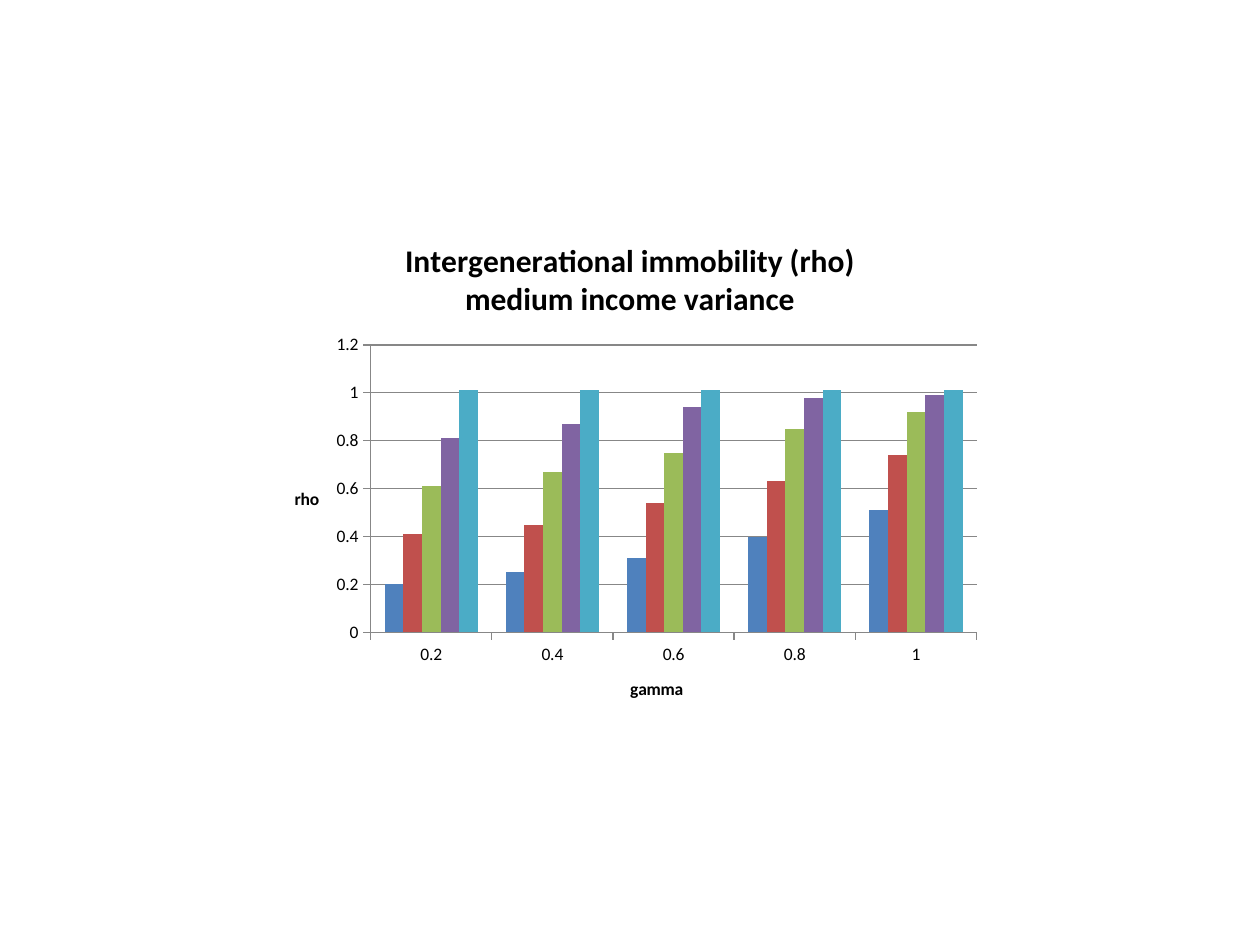
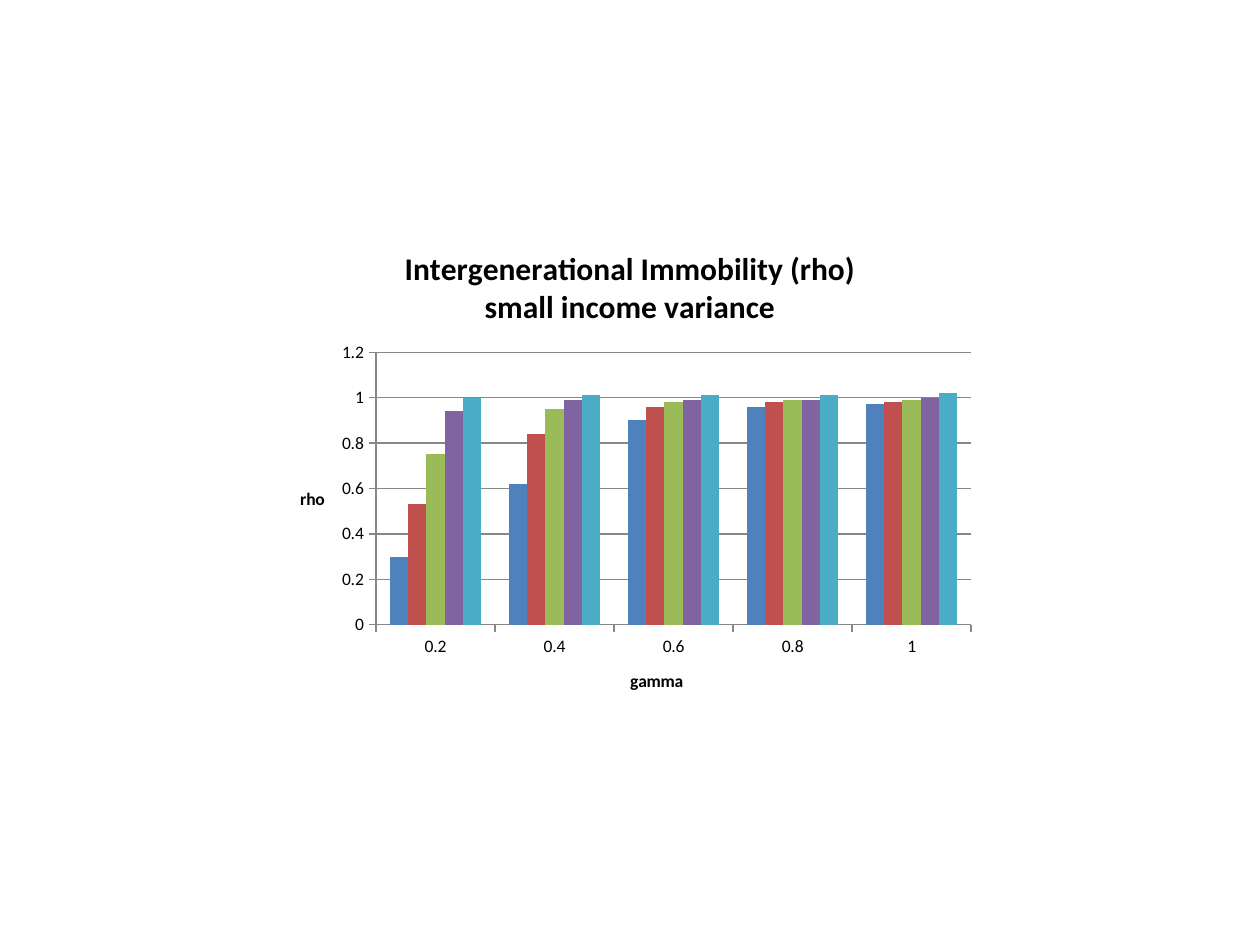
from dataclasses import dataclass

from pptx import Presentation
from pptx.chart.data import CategoryChartData
from pptx.dml.color import RGBColor
from pptx.enum.chart import XL_CHART_TYPE, XL_TICK_MARK
from pptx.util import Inches, Pt

COLUMNS = XL_CHART_TYPE.COLUMN_CLUSTERED
OUT, NONE = XL_TICK_MARK.OUTSIDE, XL_TICK_MARK.NONE


@dataclass(frozen=True)
class Theme:
    font: str = "Calibri"
    ink: str = "000000"
    rule: str = "878787"
    bars: tuple = ("4F81BD", "C0504D", "9BBB59", "8064A2", "4BACC6")
    title: int = 18
    label: int = 10
    line: float = 0.75


THEME = Theme()
WIDE, HIGH = Inches(10), Inches(7.5)
GAMMA = ("0.2", "0.4", "0.6", "0.8", "1")

# Each chart: title, share of the slide's width and height, rows of rho
CHARTS = (
    ("Intergenerational immobility (rho)\nmedium income variance", (0.573, 0.536), (
        (0.2, 0.25, 0.31, 0.4, 0.51),
        (0.41, 0.45, 0.54, 0.63, 0.74),
        (0.61, 0.67, 0.75, 0.85, 0.92),
        (0.81, 0.87, 0.94, 0.98, 0.99),
        (1.01, 1.01, 1.01, 1.01, 1.01))),
    ("Intergenerational Immobility (rho)\nsmall income variance", (0.564, 0.519), (
        (0.3, 0.62, 0.9, 0.96, 0.97),
        (0.53, 0.84, 0.96, 0.98, 0.98),
        (0.75, 0.95, 0.98, 0.99, 0.99),
        (0.94, 0.99, 0.99, 0.99, 1),
        (1, 1.01, 1.01, 1.01, 1.02))),
)


def style(font, size=THEME.label, bold=False):
    font.name, font.size, font.bold = THEME.font, Pt(size), bold
    font.color.rgb = RGBColor.from_string(THEME.ink)


def write(frame, text, **form):
    frame.text = text
    for para in frame.paragraphs:
        style(para.font, **form)
        for run in para.runs:
            style(run.font, **form)
    # Keep titles level, on the upright axis too
    body = frame._txBody.bodyPr
    body.set("rot", "0")
    body.set("vert", "horz")


def rule(line):
    line.color.rgb = RGBColor.from_string(THEME.rule)
    line.width = Pt(THEME.line)


def set_axis(axis, name, grid):
    write(axis.axis_title.text_frame, name, bold=True)
    style(axis.tick_labels.font)
    axis.major_tick_mark, axis.minor_tick_mark = OUT, NONE
    rule(axis.format.line)
    axis.has_major_gridlines = grid
    if grid:
        rule(axis.major_gridlines.format.line)


def add_bars(slide, box, title, rows):
    data = CategoryChartData()
    data.categories = GAMMA
    for num, row in enumerate(rows, 1):
        data.add_series(f"Series {num}", row)
    chart = slide.shapes.add_chart(COLUMNS, *box, data).chart
    style(chart.font)
    chart.has_legend = False
    write(chart.chart_title.text_frame, title, size=THEME.title, bold=True)
    chart.chart_title.include_in_layout = False

    # Axes
    set_axis(chart.category_axis, "gamma", False)
    set_axis(chart.value_axis, "rho", True)

    # Bars
    plot = chart.plots[0]
    plot.gap_width, plot.overlap, plot.vary_by_categories = 150, 0, False
    for bar, color in zip(plot.series, THEME.bars):
        bar.format.fill.solid()
        bar.format.fill.fore_color.rgb = RGBColor.from_string(color)
        bar.invert_if_negative = False


def center(share):
    wide, high = int(WIDE * share[0]), int(HIGH * share[1])
    return (WIDE - wide) // 2, (HIGH - high) // 2, wide, high


def main():
    deck = Presentation()
    deck.slide_width, deck.slide_height = WIDE, HIGH
    for title, share, rows in CHARTS:
        slide = deck.slides.add_slide(deck.slide_layouts[6])
        add_bars(slide, center(share), title, rows)
    deck.save("out.pptx")


if __name__ == "__main__":
    main()
